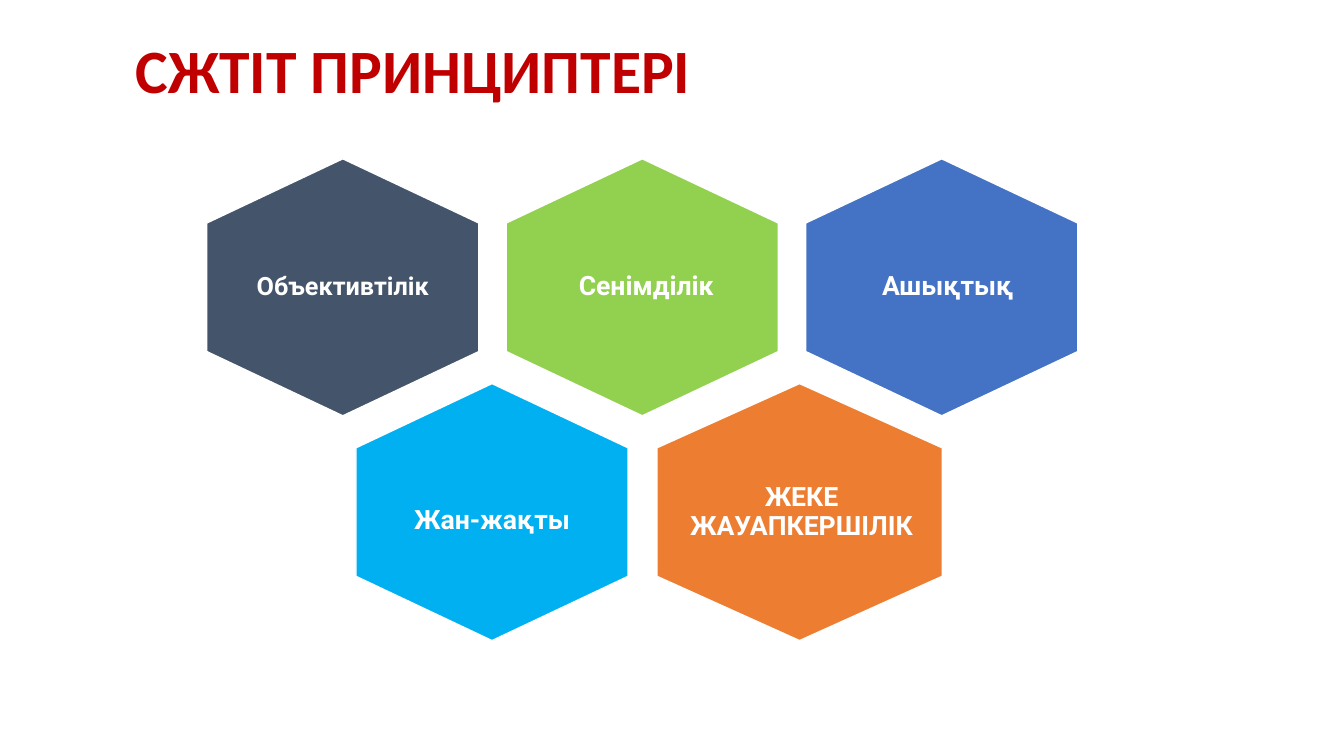
import pptx
import pptx.util
import pptx.dml.color
import pptx.enum.shapes
import pptx.enum.text
from dataclasses import dataclass

Inches = pptx.util.Inches


@dataclass(frozen=True)
class Theme:
    white: str = "FFFFFF"
    title_red: str = "C00000"
    slate: str = "44546A"
    green: str = "92D050"
    blue: str = "4472C4"
    sky: str = "00B0F0"
    orange: str = "ED7D31"
    title_font: str = "Calibri"
    label_font: str = "Roboto"
    title_size: int = 44
    label_size: int = 19
    small_label_size: int = 18


class PrinciplesSlide:
    def __init__(self, slide, theme):
        self.slide = slide
        self.theme = theme

    def text(self, wording, box, font, size, color, align, inset):
        """Add a vertically centred, bold text box."""
        frame = self.slide.shapes.add_textbox(*map(Inches, box)).text_frame
        frame_format = {
            "word_wrap": True,
            "vertical_anchor": pptx.enum.text.MSO_ANCHOR.MIDDLE,
            "margin_left": Inches(inset),
            "margin_right": Inches(inset),
            "margin_top": Inches(inset / 2),
            "margin_bottom": Inches(inset / 2),
        }
        for name, value in frame_format.items():
            setattr(frame, name, value)

        paragraph = frame.paragraphs[0]
        paragraph.alignment = align
        paragraph.line_spacing = 0.9
        run = paragraph.add_run()
        run.text = wording
        font_format = {"name": font, "size": pptx.util.Pt(size), "bold": True}
        for name, value in font_format.items():
            setattr(run.font, name, value)
        run.font.color.rgb = pptx.dml.color.RGBColor.from_string(color)

    def title(self, wording):
        theme = self.theme
        self.text(wording, (1.25, 0.15, 11.5, 1.15), theme.title_font,
                  theme.title_size, theme.title_red,
                  pptx.enum.text.PP_ALIGN.LEFT, 0.1)

    def hexagon(self, center_x, center_y, span, color):
        """Add a point-up hexagon; span is its visible width."""
        height = 2.55
        hexagon = self.slide.shapes.add_shape(
            pptx.enum.shapes.MSO_SHAPE.HEXAGON,
            Inches(center_x - height / 2), Inches(center_y - span / 2),
            Inches(height), Inches(span))
        hexagon.rotation = 90
        hexagon.adjustments[0] = 0.25
        hexagon.shadow.inherit = False
        hexagon.fill.solid()
        hexagon.fill.fore_color.rgb = pptx.dml.color.RGBColor.from_string(color)
        hexagon.line.color.rgb = pptx.dml.color.RGBColor.from_string(self.theme.white)
        hexagon.line.width = pptx.util.Pt(1)

    def label(self, wording, center_x, center_y, width, size):
        height = 1.75
        self.text(wording,
                  (center_x - width / 2, center_y - height / 2, width, height),
                  self.theme.label_font, size, self.theme.white,
                  pptx.enum.text.PP_ALIGN.CENTER, 0)


def main():
    deck = pptx.Presentation()
    deck.slide_width, deck.slide_height = Inches(13.33), Inches(7.5)
    theme = Theme()
    page = PrinciplesSlide(deck.slides.add_slide(deck.slide_layouts[6]), theme)

    # Rows: first centre x, centre y, pitch, and the principles in each:
    # wording, colour, hexagon span, label width, label shift (x, y), size
    big, small = theme.label_size, theme.small_label_size
    rows = [
        (3.4, 2.85, 2.97, [
            ("Объективтілік", theme.slate, 2.7, 2.4, (0, 0), small),
            ("Сенімділік", theme.green, 2.7, 2.6, (0.04, 0), big),
            ("Ашықтық", theme.blue, 2.7, 2.6, (0.06, 0), big),
        ]),
        (4.88, 5.08, 3.05, [
            ("Жан-жақты", theme.sky, 2.7, 2.7, (0, 0.09), big),
            ("ЖЕКЕ ЖАУАПКЕРШІЛІК", theme.orange, 2.83, 2.8, (0.02, 0), big),
        ]),
    ]

    # Honeycomb of principles
    for first_x, center_y, pitch, principles in rows:
        for column, principle in enumerate(principles):
            wording, color, span, width, (shift_x, shift_y), size = principle
            center_x = first_x + column * pitch
            page.hexagon(center_x, center_y, span, color)
            page.label(wording, center_x + shift_x, center_y + shift_y, width, size)

    # Heading
    page.title("СЖТІТ ПРИНЦИПТЕРІ")

    deck.save("out.pptx")


if __name__ == "__main__":
    main()
